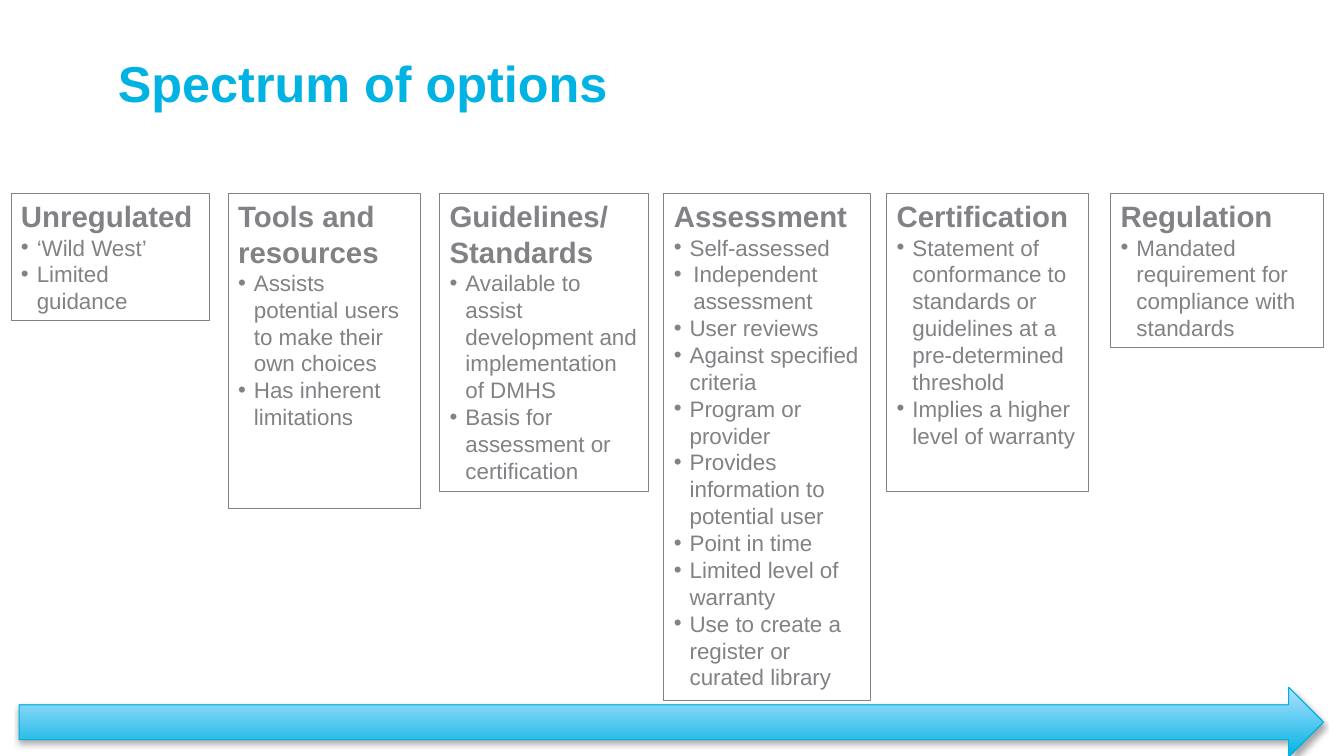
from lxml import etree
from pptx import Presentation
from pptx import util as u
from pptx.dml import color
from pptx.enum import shapes, text
from pptx.oxml import ns

COLORS = {"cyan": "00B3E2", "pale": "AFE1FF", "edge": "00AFDD", "grey": "818285", "shadow": "000000"}
FONT = "Arial"
TITLE = "Spectrum of options"
CARD_TOP = 138.2
INDENT = 11.3
WIDE_INDENT = {"Independent assessment": 14}
CARDS = [
    ("Unregulated", (7.9, 141.8, 90.7), ["‘Wild West’", "Limited guidance"]),
    ("Tools and resources", (163, 137.5, 225.4), [
        "Assists potential users to make their own choices",
        "Has inherent limitations",
    ]),
    ("Guidelines/ Standards", (314.1, 149, 213.1), [
        "Available to assist development and implementation of DMHS",
        "Basis for assessment or certification",
    ]),
    ("Assessment", (474.2, 147.6, 362.2), [
        "Self-assessed",
        "Independent assessment",
        "User reviews",
        "Against specified criteria",
        "Program or provider",
        "Provides information to potential user",
        "Point in time",
        "Limited level of warranty",
        "Use to create a register or curated library",
    ]),
    ("Certification", (633.4, 144, 213.1), [
        "Statement of conformance to standards or guidelines at a pre-determined threshold",
        "Implies a higher level of warranty",
    ]),
    ("Regulation", (793.4, 151.9, 110.2), [
        "Mandated requirement for compliance with standards",
    ]),
]


def rgb(name):
    return color.RGBColor.from_string(COLORS[name])


def style(para, size, tint, bold):
    para.alignment = text.PP_ALIGN.LEFT
    para.line_spacing = 1.0
    para.space_before = para.space_after = u.Pt(0)
    for span in para.runs:
        span.font.name = FONT
        span.font.size = u.Pt(size)
        span.font.bold = bold
        span.font.color.rgb = rgb(tint)


def add_bullet(para, indent):
    props = para._p.get_or_add_pPr()
    props.set("marL", str(u.Pt(indent)))
    props.set("indent", str(-u.Pt(indent)))
    etree.SubElement(props, ns.qn("a:buFont"), typeface=FONT)
    etree.SubElement(props, ns.qn("a:buChar"), char="•")


def add_card(page, heading, place, items):
    left, width, height = place
    box = page.shapes.add_shape(shapes.MSO_SHAPE.RECTANGLE, u.Pt(left), u.Pt(CARD_TOP), u.Pt(width), u.Pt(height))
    box.shadow.inherit = False
    box.fill.background()
    box.line.color.rgb = rgb("grey")
    box.line.width = u.Pt(0.75)
    frame = box.text_frame
    frame.word_wrap = True
    frame.auto_size = text.MSO_AUTO_SIZE.SHAPE_TO_FIT_TEXT
    frame.vertical_anchor = text.MSO_ANCHOR.TOP
    frame.text = heading
    style(frame.paragraphs[0], 21, "grey", True)
    for item in items:
        para = frame.add_paragraph()
        para.text = item
        add_bullet(para, WIDE_INDENT.get(item, INDENT))
        style(para, 16, "grey", False)


def add_arrow(page):
    arrow = page.shapes.add_shape(shapes.MSO_SHAPE.RIGHT_ARROW, u.Pt(13.7), u.Pt(491), u.Pt(931.7), u.Pt(49.7))
    arrow.shadow.inherit = False
    arrow.fill.gradient()
    arrow.fill.gradient_angle = 90
    for stop, name in zip(arrow.fill.gradient_stops, ("cyan", "pale")):
        stop.color.rgb = rgb(name)
    arrow.line.color.rgb = rgb("edge")
    arrow.line.width = u.Pt(0.75)
    effects = arrow._element.spPr.find(ns.qn("a:effectLst"))
    shadow = etree.SubElement(effects, ns.qn("a:outerShdw"), blurRad=str(u.Pt(3.1)),
                              dist=str(u.Pt(1.8)), dir="5400000", rotWithShape="0")
    tint = etree.SubElement(shadow, ns.qn("a:srgbClr"), val=COLORS["shadow"])
    etree.SubElement(tint, ns.qn("a:alpha"), val="35000")


def main():
    deck = Presentation()
    deck.slide_width, deck.slide_height = u.Pt(960), u.Pt(540)
    page = deck.slides.add_slide(deck.slide_layouts[5])
    title = page.shapes.title
    title.left, title.top, title.width, title.height = map(u.Pt, (77, 33.8, 835.2, 77.8))
    title.text_frame.text = TITLE
    title.text_frame.auto_size = text.MSO_AUTO_SIZE.NONE
    title.text_frame.vertical_anchor = text.MSO_ANCHOR.TOP
    style(title.text_frame.paragraphs[0], 36, "cyan", True)
    for heading, place, items in CARDS:
        add_card(page, heading, place, items)
    add_arrow(page)
    deck.save("out.pptx")


if __name__ == "__main__":
    main()
